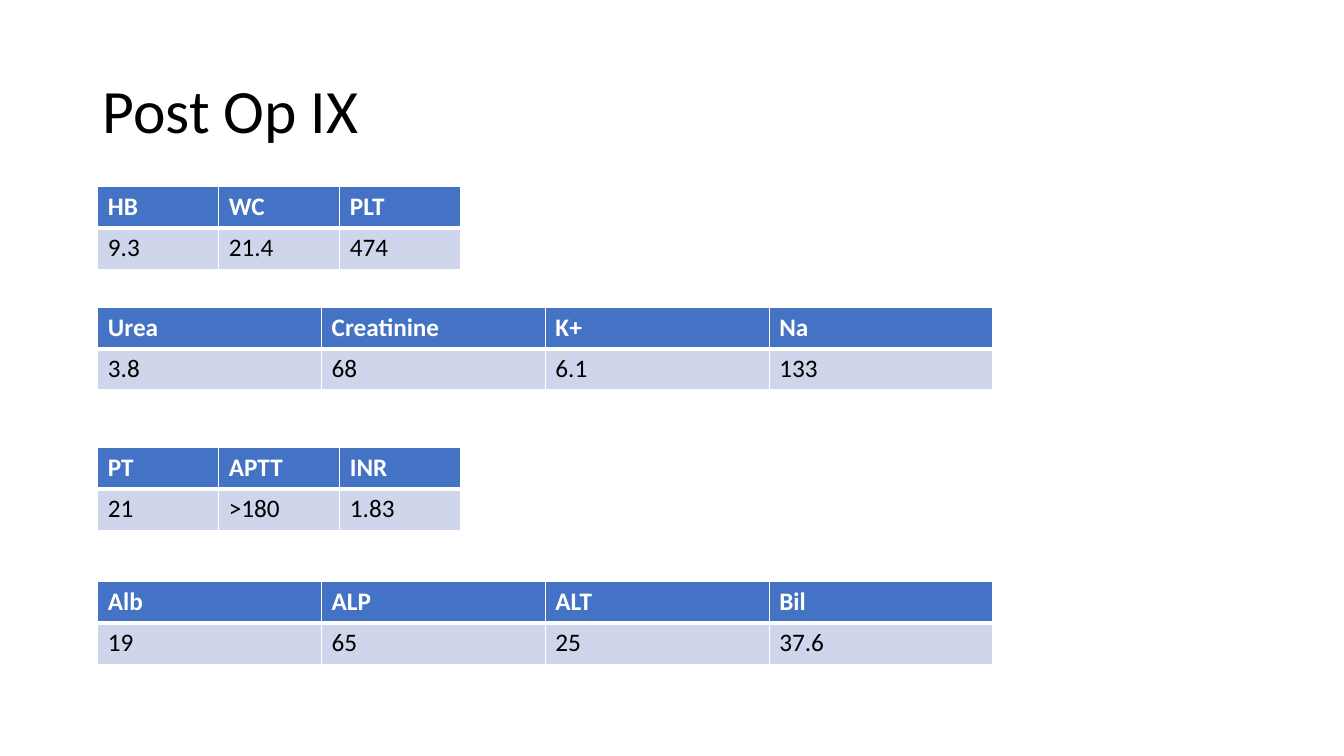
"""Build the post-operative blood results slide."""
from lxml import etree
from pptx import Presentation
from pptx import util as u
from pptx.dml.color import RGBColor
from pptx.enum import text
from pptx.oxml.ns import qn

SCALE = 9144
HUES = {"ink": "000000", "paper": "FFFFFF", "head": "4472C4", "band": "CFD5EA"}
TESTS = [
    (185, 120, {"HB": "9.3", "WC": "21.4", "PLT": "474"}),
    (305, 222, {"Urea": "3.8", "Creatinine": "68", "K+": "6.1", "Na": "133"}),
    (444, 120, {"PT": "21", "APTT": ">180", "INR": "1.83"}),
    (577, 222, {"Alb": "19", "ALP": "65", "ALT": "25", "Bil": "37.6"}),
]


def px(size):
    return u.Emu(size * SCALE)


def hue(name):
    return RGBColor.from_string(HUES[name])


def write(frame, words, size=18, color="ink", bold=False, lead=None):
    para = frame.paragraphs[0]
    para.line_spacing = lead
    run = para.add_run()
    run.text = words
    font = run.font
    font.name, font.size, font.bold = "Calibri", u.Pt(size), bold
    font.color.rgb = hue(color)


class Sheet:
    def __init__(self, wide, high):
        self.deck = Presentation()
        self.deck.slide_width, self.deck.slide_height = px(wide), px(high)
        self.slide = self.deck.slides.add_slide(self.deck.slide_layouts[6])

    def title(self, words, *box):
        frame = self.slide.shapes.add_textbox(*map(px, box)).text_frame
        frame.word_wrap = True
        frame.vertical_anchor = text.MSO_ANCHOR.MIDDLE
        write(frame, words, size=44, lead=0.9)

    def border(self, cell, **sides):
        props = cell._tc.get_or_add_tcPr()
        for side, width in sides.items():
            line = etree.SubElement(props, qn(f"a:ln{side}"), w=str(u.Pt(width)))
            fill = etree.SubElement(line, qn("a:solidFill"))
            etree.SubElement(fill, qn("a:srgbClr"), val=HUES["paper"])

    def cell(self, cell, words, head):
        self.border(cell, L=1, R=1, T=1 if head else 3, B=3 if head else 1)
        cell.fill.solid()
        cell.fill.fore_color.rgb = hue("head" if head else "band")
        write(cell.text_frame, words, color="paper" if head else "ink", bold=head)

    def table(self, left, top, wide, high, tests):
        count = len(tests)
        box = map(px, (left, top, wide * count, high * 2))
        grid = self.slide.shapes.add_table(2, count, *box).table
        for col, pair in enumerate(tests.items()):
            grid.columns[col].width = px(wide)
            for row, words in enumerate(pair):
                self.cell(grid.cell(row, col), words, row == 0)


def main():
    sheet = Sheet(1333, 750)
    sheet.title("Post Op IX", 92, 40, 1150, 145)
    for top, wide, tests in TESTS:
        sheet.table(97, top, wide, 41, tests)
    sheet.deck.save("out.pptx")


if __name__ == "__main__":
    main()
